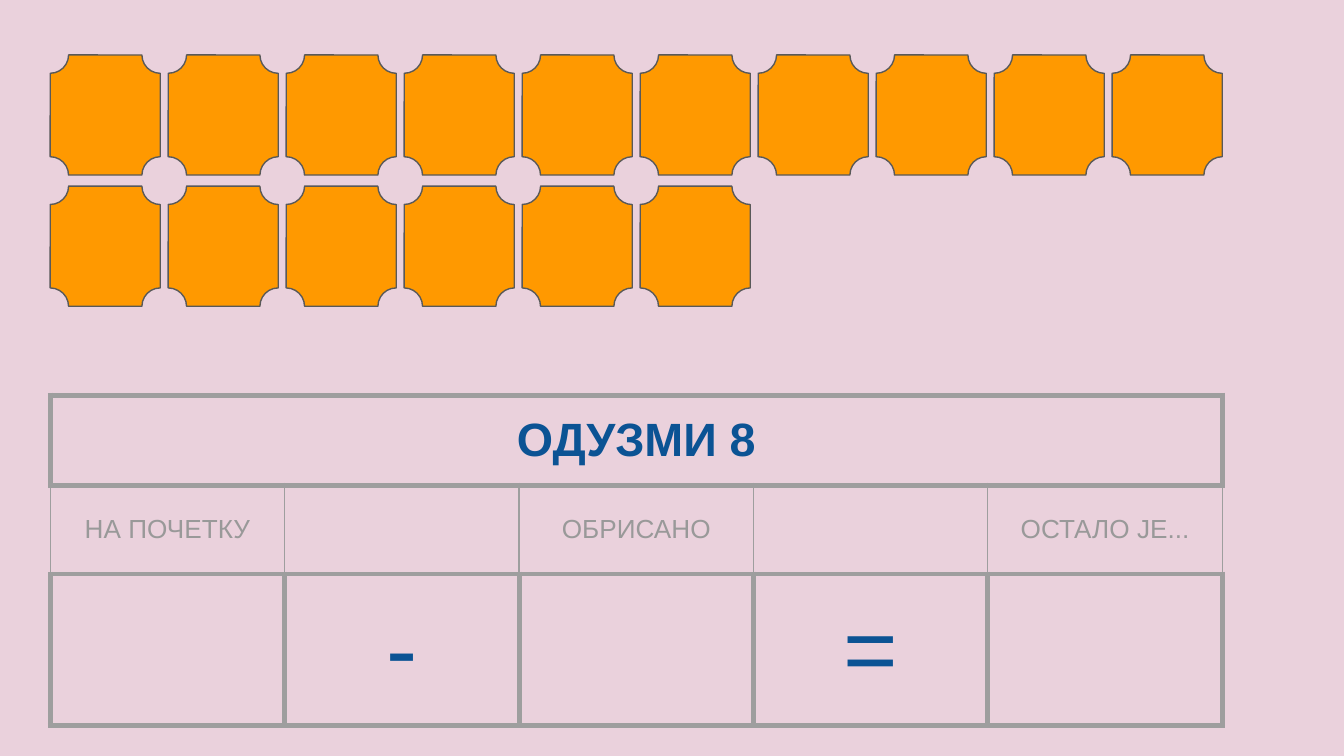
import dataclasses

import lxml.etree
import pptx
import pptx.dml.color
import pptx.enum.shapes
import pptx.enum.text
import pptx.oxml.ns
import pptx.util

Cm = pptx.util.Cm
Pt = pptx.util.Pt


@dataclasses.dataclass(frozen=True)
class Theme:
    """Hold the colours, font and sizes of the slide."""
    back: str = "EAD1DC"
    tile: str = "FF9900"
    edge: str = "595959"
    rule: str = "9E9E9E"
    ink: str = "0B5394"
    pale: str = "999999"
    font: str = "Arial"
    head: int = 25
    label: int = 14
    sign: int = 50
    thin: float = 0.75
    thick: float = 3


THEME = Theme()
ROWS = [
    ["ОДУЗМИ 8", "", "", "", ""],
    ["НА ПОЧЕТКУ", "", "ОБРИСАНО", "", "ОСТАЛО ЈЕ..."],
    ["", "-", "", "=", ""],
]
FONTS = [
    {"size": Pt(THEME.head), "bold": True, "name": THEME.font},
    {"size": Pt(THEME.label), "bold": False, "name": THEME.font},
    {"size": Pt(THEME.sign), "bold": False, "name": THEME.font},
]
INKS = [THEME.ink, THEME.pale, THEME.ink]
CELL = {
    "vertical_anchor": pptx.enum.text.MSO_ANCHOR.MIDDLE,
    "margin_left": Cm(0.25),
    "margin_right": Cm(0.25),
    "margin_top": Cm(0.25),
    "margin_bottom": Cm(0.25),
}
PLAIN = {"first_row": False, "horz_banding": False}


def tint(code):
    """Turn a hex code into a colour."""
    return pptx.dml.color.RGBColor.from_string(code)


def apply(item, form):
    """Set each format value on an item."""
    for name, value in form.items():
        setattr(item, name, value)


def add_tile(slide, left, top):
    """Draw one orange plaque."""
    kind = pptx.enum.shapes.MSO_SHAPE.PLAQUE
    tile = slide.shapes.add_shape(kind, left, top, Cm(2.08), Cm(2.27))
    tile.shadow.inherit = False
    tile.fill.solid()
    tile.fill.fore_color.rgb = tint(THEME.tile)
    tile.line.color.rgb = tint(THEME.edge)
    tile.line.width = Pt(THEME.thin)


def add_tiles(slide, counts):
    """Lay out rows of tiles with the given counts."""
    for row, count in enumerate(counts):
        for col in range(count):
            add_tile(slide, Cm(0.95 + 2.23 * col), Cm(1.04 + 2.48 * row))


def add_rules(cell, sides):
    """Draw the borders of a cell from widths by side."""
    props = cell._tc.get_or_add_tcPr()
    for place, (side, width) in enumerate(sides.items()):
        line = lxml.etree.Element(pptx.oxml.ns.qn(f"a:ln{side}"), w=str(Pt(width)))
        fill = lxml.etree.SubElement(line, pptx.oxml.ns.qn("a:solidFill"))
        lxml.etree.SubElement(fill, pptx.oxml.ns.qn("a:srgbClr"), val=THEME.rule)
        props.insert(place, line)


def fill_cell(cell, text, font, ink, side):
    """Format one cell and write its text."""
    apply(cell, CELL)
    cell.fill.background()
    add_rules(cell, {"L": side, "R": side, "T": THEME.thick, "B": THEME.thick})
    if text:
        para = cell.text_frame.paragraphs[0]
        para.alignment = pptx.enum.text.PP_ALIGN.CENTER
        run = para.add_run()
        run.text = text
        apply(run.font, font)
        run.font.color.rgb = tint(ink)


def add_grid(slide):
    """Build the table for the sum."""
    wide, highs = 4.43, [1.7, 1.68, 2.87]
    size = Cm(wide * 5), Cm(sum(highs))
    table = slide.shapes.add_table(3, 5, Cm(0.95), Cm(7.47), *size).table
    apply(table, PLAIN)
    for col in table.columns:
        col.width = Cm(wide)
    for row, high in zip(table.rows, highs):
        row.height = Cm(high)
    table.cell(0, 0).merge(table.cell(0, 4))
    sides = [THEME.thick, THEME.thin, THEME.thick]
    for row, texts in enumerate(ROWS):
        for col, text in enumerate(texts):
            fill_cell(table.cell(row, col), text, FONTS[row], INKS[row], sides[row])


def main():
    """Build and save the slide."""
    deck = pptx.Presentation()
    apply(deck, {"slide_width": Cm(25.4), "slide_height": Cm(14.29)})
    slide = deck.slides.add_slide(deck.slide_layouts[6])
    slide.background.fill.solid()
    slide.background.fill.fore_color.rgb = tint(THEME.back)
    add_grid(slide)
    add_tiles(slide, [10, 6])
    deck.save("out.pptx")


if __name__ == "__main__":
    main()
